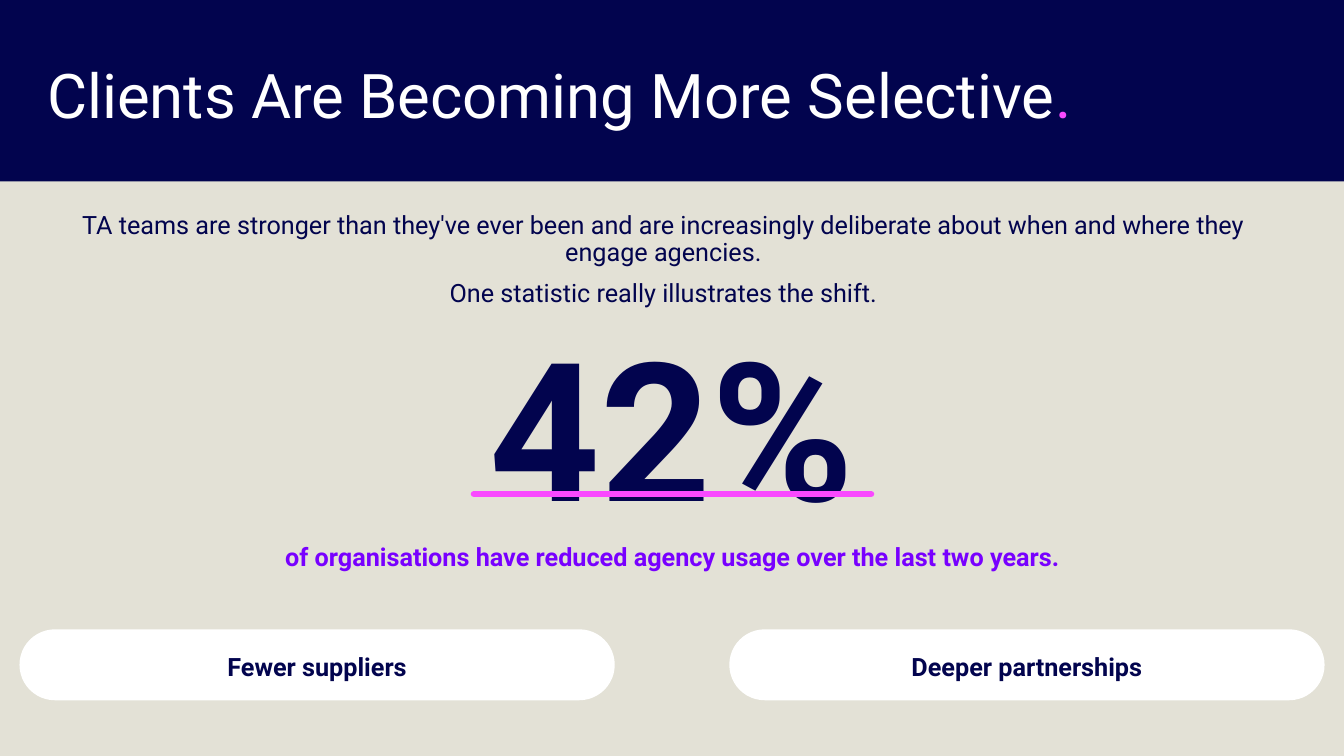
from lxml import etree
from pptx import Presentation
from pptx.dml.color import RGBColor
from pptx.enum.shapes import MSO_CONNECTOR, MSO_SHAPE
from pptx.enum.text import MSO_ANCHOR, PP_ALIGN
from pptx.oxml.ns import qn
from pptx.util import Inches, Pt

COLORS = {"navy": "02044E", "sand": "E3E1D6", "white": "FFFFFF",
          "pink": "F949FF", "violet": "7800FF"}
RGB = {name: RGBColor.from_string(value) for name, value in COLORS.items()}


def add_panel(shape_type, x, y, w, h, color):
    sp = s.shapes.add_shape(shape_type, Inches(x), Inches(y), Inches(w), Inches(h))
    sp.shadow.inherit = False
    sp.fill.solid()
    sp.fill.fore_color.rgb = RGB[color]
    sp.line.fill.background()
    return sp


def write(sp, paragraphs, size, bold=False, anchor=MSO_ANCHOR.TOP,
          align=PP_ALIGN.CENTER, **spacing):
    """Fill a shape with paragraphs, each a list of (text, color) runs."""
    tf = sp.text_frame
    tf.word_wrap = True
    tf.vertical_anchor = anchor
    for i, runs in enumerate(paragraphs):
        p = tf.add_paragraph() if i else tf.paragraphs[0]
        p.alignment = align
        for name, value in spacing.items():
            setattr(p, name, value)
        if i:
            p.space_before = Pt(10)
        for text, color in runs:
            r = p.add_run()
            r.text = text
            for name, value in {"name": "Roboto", "size": Pt(size), "bold": bold}.items():
                setattr(r.font, name, value)
            r.font.color.rgb = RGB[color]


prs = Presentation()
prs.slide_width, prs.slide_height = Inches(13.33), Inches(7.5)
s = prs.slides.add_slide(prs.slide_layouts[6])
s.background.fill.solid()
s.background.fill.fore_color.rgb = RGB["sand"]

add_panel(MSO_SHAPE.RECTANGLE, 0, 0, 13.33, 1.8, "navy")

texts = [
    ((0.37, 0.35, 11.39, 1.26),
     [[("Clients Are Becoming More Selective", "white"), (".", "pink")]],
     {"size": 44, "anchor": MSO_ANCHOR.MIDDLE, "align": PP_ALIGN.LEFT, "line_spacing": 0.9}),
    ((0.48, 2.06, 12.2, 1.1),
     [[("TA teams are stronger than they've ever been and are increasingly deliberate "
        "about when and where they engage agencies.", "navy")],
      [("One statistic really illustrates the shift.", "navy")]],
     {"size": 18, "line_spacing": 0.9}),
    ((2.63, 3.01, 8.07, 2.42), [[("42%", "navy")]], {"size": 138, "bold": True}),
    ((2.3, 5.32, 8.74, 0.4),
     [[("of organisations have reduced agency usage over the last two years.", "violet")]],
     {"size": 18, "bold": True}),
]
for box, paragraphs, style in texts:
    write(s.shapes.add_textbox(*map(Inches, box)), paragraphs, **style)

underline = s.shapes.add_connector(MSO_CONNECTOR.STRAIGHT, Inches(4.7), Inches(4.9),
                                   Inches(8.64), Inches(4.9))
underline.line.color.rgb = RGB["pink"]
underline.line.width = Pt(4.5)
spPr = underline._element.spPr
spPr.find(qn("a:ln")).set("cap", "rnd")
etree.SubElement(spPr, qn("a:effectLst"))

for x, label in [(0.2, "Fewer suppliers"), (7.24, "Deeper partnerships")]:
    pill = add_panel(MSO_SHAPE.ROUNDED_RECTANGLE, x, 6.25, 5.89, 0.69, "white")
    pill.adjustments[0] = 0.5
    pill.line.color.rgb = RGB["white"]
    pill.line.width = Pt(1)
    pill.text_frame.margin_top = Inches(0.08)
    write(pill, [[(label, "navy")]], size=18, bold=True, anchor=MSO_ANCHOR.MIDDLE)

prs.save("out.pptx")
